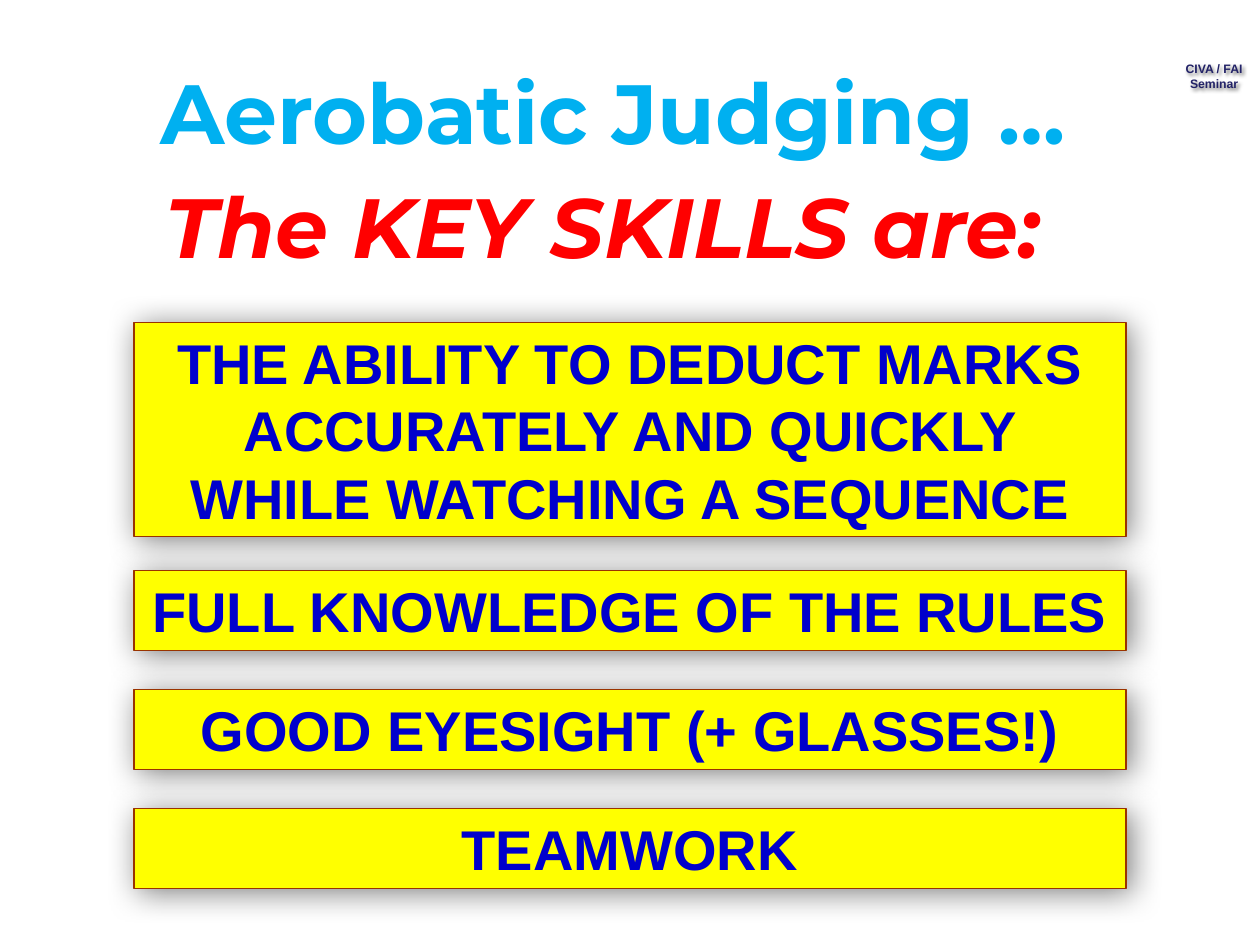
from lxml import etree
from pptx import Presentation
from pptx.dml.color import RGBColor
from pptx.enum.shapes import MSO_SHAPE
from pptx.enum.text import MSO_ANCHOR, PP_ALIGN
from pptx.oxml.ns import qn
from pptx.util import Cm, Pt

SKY = RGBColor(0x00, 0xB0, 0xF0)
RED = RGBColor(0xFF, 0x00, 0x00)
YELLOW = RGBColor(0xFF, 0xFF, 0x00)
BROWN = RGBColor(0x99, 0x33, 0x00)
BLUE = RGBColor(0x00, 0x00, 0xCC)
NAVY = RGBColor(0x22, 0x22, 0x67)
GREY = RGBColor(0x80, 0x80, 0x80)

# Text, top and height in cm
SKILLS = [
    ("THE ABILITY TO DEDUCT MARKS ACCURATELY AND QUICKLY "
     "WHILE WATCHING A SEQUENCE", 6.5, 4.32),
    ("FULL KNOWLEDGE OF THE RULES", 11.5, 1.61),
    ("GOOD EYESIGHT (+ GLASSES!)", 13.9, 1.61),
    ("TEAMWORK", 16.3, 1.61),
]


def add_shadow(shape, color, blur, distance):
    """Cast a shadow down and to the right."""
    shape.shadow.inherit = False
    effects = shape._element.spPr.find(qn("a:effectLst"))
    shadow = etree.SubElement(
        effects, qn("a:outerShdw"), blurRad=str(Pt(blur)),
        dist=str(Pt(distance)), dir="2700000", algn="ctr", rotWithShape="0")
    etree.SubElement(shadow, qn("a:srgbClr"), val=str(color))


def write(shape, lines, font_name, size, color, italic=False):
    """Write centred bold lines in a shape."""
    frame = shape.text_frame
    frame.text = "\n".join(lines)
    for paragraph in frame.paragraphs:
        paragraph.alignment = PP_ALIGN.CENTER
        font = paragraph.font
        font.name, font.size, font.bold = font_name, Pt(size), True
        font.italic = italic
        font.color.rgb = color


def add_seminar_label(slide, left, top, width, height):
    label = slide.shapes.add_textbox(left, top, width, height)
    label.text_frame.word_wrap = False
    write(label, ["CIVA / FAI", "Seminar"], "Arial", 7, NAVY)
    add_shadow(label, GREY, 2, 1.5)


def add_heading(slide, left, top, width, height):
    # Key skills line in the title placeholder
    title = slide.shapes.title
    title.left, title.top = left, top + Cm(2.31)
    title.width, title.height = width, height
    # Topic line above it
    topic = slide.shapes.add_textbox(left + Cm(0.2), top, width, height)
    for shape in (title, topic):
        shape.text_frame.word_wrap = True
        shape.text_frame.vertical_anchor = MSO_ANCHOR.MIDDLE
    write(title, ["The KEY SKILLS are:"], "Montserrat", 48, RED, italic=True)
    write(topic, ["Aerobatic Judging …"], "Montserrat", 48, SKY)


def add_skill(slide, text, left, top, width, height):
    box = slide.shapes.add_shape(MSO_SHAPE.RECTANGLE, left, top, width, height)
    box.fill.solid()
    box.fill.fore_color.rgb = YELLOW
    box.line.color.rgb = BROWN
    box.line.width = Pt(0.75)
    add_shadow(box, GREY, 18, 2.8)
    box.text_frame.word_wrap = True
    box.text_frame.vertical_anchor = MSO_ANCHOR.TOP
    write(box, [text], "Arial", 32, BLUE)


def main():
    presentation = Presentation()
    presentation.slide_width, presentation.slide_height = Cm(25.4), Cm(19.05)
    slide = presentation.slides.add_slide(presentation.slide_layouts[5])

    add_seminar_label(slide, Cm(23.61), Cm(1.12), Cm(1.73), Cm(0.86))
    add_heading(slide, Cm(1.61), Cm(0.64), Cm(21.1), Cm(3.18))
    for text, top, height in SKILLS:
        add_skill(slide, text, Cm(2.7), Cm(top), Cm(20), Cm(height))

    presentation.save("out.pptx")


if __name__ == "__main__":
    main()
